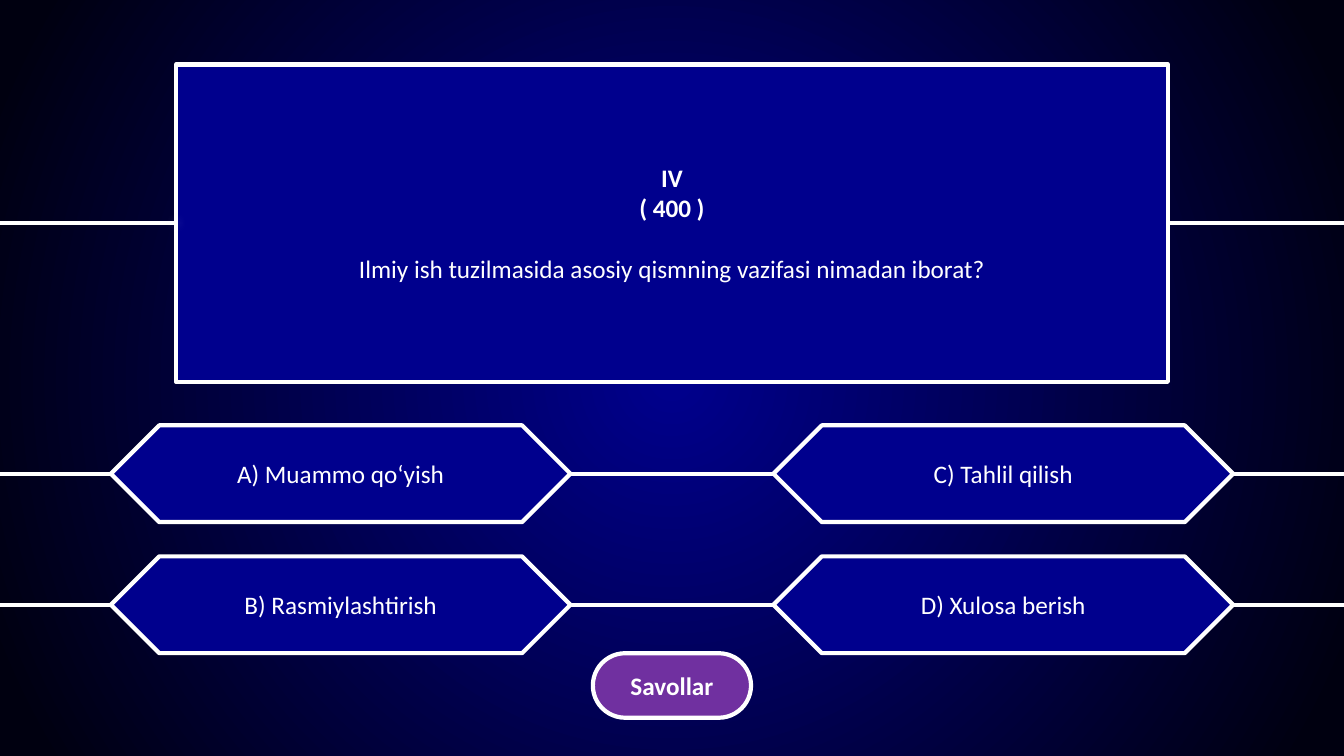
"""Build a quiz slide with one question, four answers and a button."""
from dataclasses import dataclass

from lxml import etree
from pptx import Presentation
from pptx.dml.color import RGBColor
from pptx.enum import shapes, text
from pptx.oxml import parse_xml
from pptx.oxml.ns import nsdecls, qn
from pptx.util import Pt

QUESTION = ["IV", "( 400 )", "Ilmiy ish tuzilmasida asosiy qismning vazifasi nimadan iborat?"]
ANSWERS = [
    ["A) Muammo qo‘yish", "C) Tahlil qilish"],
    ["B) Rasmiylashtirish", "D) Xulosa berish"],
]
BUTTON = "Savollar"


@dataclass(frozen=True)
class Theme:
    panel: RGBColor = RGBColor(0x00, 0x00, 0x8D)
    edge: RGBColor = RGBColor(0x00, 0x00, 0x10)
    button: RGBColor = RGBColor(0x70, 0x30, 0xA0)
    white: RGBColor = RGBColor(0xFF, 0xFF, 0xFF)
    font: str = "Calibri"
    size: int = 18
    stroke: int = 3


THEME = Theme()
WIDTH, HEIGHT = 960, 540
QUESTION_W, QUESTION_H, QUESTION_MID = 708.5, 226.8, 159.4
ANSWER_W, ANSWER_H, ANSWER_LEFT = 328.3, 69.1, 79.2
ANSWER_MID, ANSWER_STEP = 338.4, 93.6
BUTTON_W, BUTTON_H, BUTTON_TOP = 113, 46.1, 466.6
GLOW = 21.6


def points(*lengths):
    return [Pt(length) for length in lengths]


def paint_background(slide):
    fill = slide.background.fill
    fill.gradient()
    for stop, color, position in zip(fill.gradient_stops, (THEME.panel, THEME.edge), (0, 0.95)):
        stop.color.rgb = color
        stop.position = position
    gradient = slide.element.find(".//" + qn("a:gradFill"))
    gradient.replace(gradient.find(qn("a:lin")), parse_xml(
        f'<a:path {nsdecls("a")} path="circle">'
        '<a:fillToRect l="50000" t="50000" r="50000" b="50000"/></a:path>'))


def add_rail(slide, y):
    rail = slide.shapes.add_connector(
        shapes.MSO_CONNECTOR.STRAIGHT, *points(WIDTH, y, 0, y))
    rail.line.color.rgb = THEME.white
    rail.line.width = Pt(THEME.stroke)
    etree.SubElement(rail.element.spPr, qn("a:effectLst"))


def style_panel(panel, lines, color, bold_lines=0):
    panel.fill.solid()
    panel.fill.fore_color.rgb = color
    panel.line.color.rgb = THEME.white
    panel.line.width = Pt(THEME.stroke)
    panel.shadow.inherit = False
    frame = panel.text_frame
    frame.text = "\n".join(lines)
    frame.word_wrap = True
    frame.auto_size = text.MSO_AUTO_SIZE.NONE
    frame.vertical_anchor = text.MSO_ANCHOR.MIDDLE
    for index, paragraph in enumerate(frame.paragraphs):
        paragraph.alignment = text.PP_ALIGN.CENTER
        font = paragraph.runs[0].font
        font.name, font.size = THEME.font, Pt(THEME.size)
        font.bold = index < bold_lines
        font.color.rgb = THEME.white


def add_question(slide):
    question = slide.shapes.title
    question.left, question.top, question.width, question.height = points(
        (WIDTH - QUESTION_W) / 2, QUESTION_MID - QUESTION_H / 2, QUESTION_W, QUESTION_H)
    question.element.spPr.append(parse_xml(
        f'<a:prstGeom {nsdecls("a")} prst="snip2DiagRect"><a:avLst>'
        '<a:gd name="adj1" fmla="val 50000"/><a:gd name="adj2" fmla="val 50000"/>'
        '</a:avLst></a:prstGeom>'))
    style_panel(question, QUESTION, THEME.panel, bold_lines=2)
    question.text_frame.paragraphs[-1].space_before = Pt(22)
    question.element.getparent().append(question.element)


def add_glow(slide):
    glow = slide.shapes.add_shape(shapes.MSO_SHAPE.OVAL, *points(
        (WIDTH - QUESTION_W - GLOW) / 2, QUESTION_MID - GLOW / 2, GLOW, GLOW))
    glow.fill.solid()
    glow.fill.fore_color.rgb = THEME.white
    glow.line.fill.background()
    glow.shadow.inherit = False
    effects = glow.element.spPr.find(qn("a:effectLst"))
    etree.SubElement(effects, qn("a:softEdge"), rad=str(Pt(7)))


def add_answers(slide):
    lefts = ANSWER_LEFT, WIDTH - ANSWER_LEFT - ANSWER_W
    for row, answers in enumerate(ANSWERS):
        middle = ANSWER_MID + row * ANSWER_STEP
        add_rail(slide, middle)
        for left, answer in zip(lefts, answers):
            panel = slide.shapes.add_shape(
                shapes.MSO_SHAPE.SNIP_2_DIAG_RECTANGLE,
                *points(left, middle - ANSWER_H / 2, ANSWER_W, ANSWER_H))
            panel.adjustments[0] = panel.adjustments[1] = 0.5
            style_panel(panel, [answer], THEME.panel)


def add_button(slide):
    button = slide.shapes.add_shape(
        shapes.MSO_SHAPE.ROUNDED_RECTANGLE,
        *points((WIDTH - BUTTON_W) / 2, BUTTON_TOP, BUTTON_W, BUTTON_H))
    button.adjustments[0] = 0.5
    style_panel(button, [BUTTON], THEME.button, bold_lines=1)


def main():
    deck = Presentation()
    deck.slide_width, deck.slide_height = points(WIDTH, HEIGHT)
    slide = deck.slides.add_slide(deck.slide_layouts[5])
    paint_background(slide)
    add_answers(slide)
    add_rail(slide, QUESTION_MID)
    add_question(slide)
    add_glow(slide)
    add_button(slide)
    deck.save("out.pptx")


if __name__ == "__main__":
    main()
